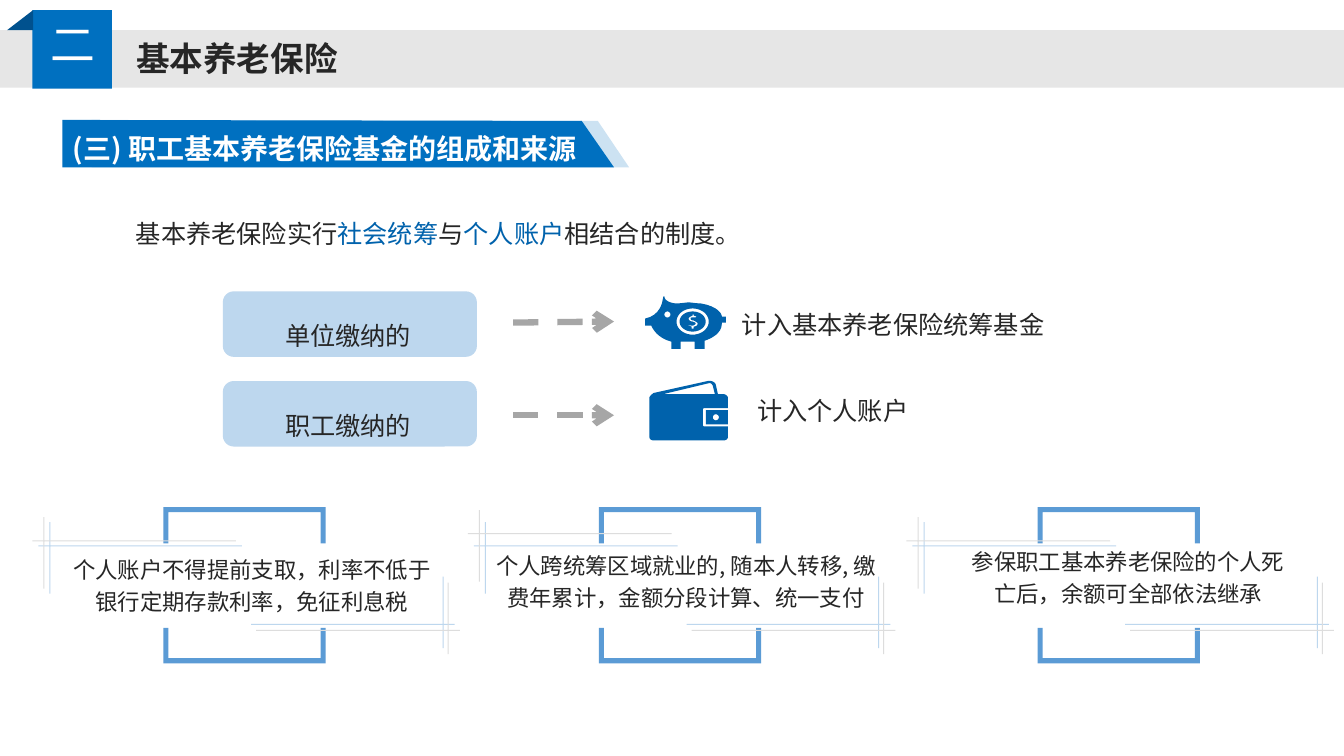
import math
from dataclasses import dataclass
from lxml import etree
from pptx import Presentation
from pptx import util as u
from pptx.dml import color
from pptx.enum import dml, shapes, text
from pptx.oxml import ns


@dataclass(frozen=True)
class Theme:
    blue: str = "0070C0"
    dark_blue: str = "00518E"
    icon: str = "0062AC"
    pale: str = "BDD7EE"
    bracket: str = "5B9BD5"
    band: str = "D9D9D9"
    hairline: str = "DDDDDD"
    arrow: str = "A6A6A6"
    ink: str = "262626"
    white: str = "FFFFFF"
    font: str = "Noto Sans CJK SC"
    number_font: str = "Noto Sans CJK JP"
    number: int = 32
    title: int = 24
    heading: int = 20
    body: int = 18
    note: int = 16


@dataclass(frozen=True)
class Run:
    words: str
    size: int
    color: str
    bold: bool = False
    font: str = Theme.font


@dataclass(frozen=True)
class Flow:
    payer: str
    top: float
    arrow_start: float
    arrow_end: float
    fund: str
    fund_box: tuple


@dataclass(frozen=True)
class Card:
    left: float
    words: str
    text_box: tuple
    gray_top: float = 5.13


THEME = Theme()
FLOWS = [
    Flow("单位缴纳的", 2.89, 3.2, 3.19, "计入基本养老保险统筹基金", (7.26, 3.02, 3.23, 0.4)),
    Flow("职工缴纳的", 3.78, 4.12, 4.12, "计入个人账户", (7.41, 3.87, 1.72, 0.4)),
]
CARDS = [
    Card(1.62, "个人账户不得提前支取，利率不低于银行定期存款利率，免征利息税", (0.62, 5.58, 3.76, 0.4)),
    Card(5.94, "个人跨统筹区域就业的, 随本人转移, 缴费年累计，金额分段计算、统一支付",
         (4.78, 5.54, 4.05, 0.4), 5.06),
    Card(10.29, "参保职工基本养老保险的个人死亡后，余额可全部依法继承", (9.54, 5.5, 3.3, 0.4)),
]
PIG = [
    (7.16, 3.14), (7.16, 3.12, 7.13, 3.04, 6.95, 3.01), (6.9, 3.01, 6.86, 3, 6.83, 3),
    (6.8, 3, 6.76, 3.01, 6.71, 3.01), (6.67, 3.01, 6.59, 2.99, 6.59, 2.94), (6.58, 2.94),
    (6.57, 2.99), (6.57, 2.99, 6.55, 3.13, 6.4, 3.16), (6.4, 3.23), (6.46, 3.23),
    (6.47, 3.25, 6.51, 3.35, 6.66, 3.39), (6.66, 3.46), (6.75, 3.46), (6.75, 3.39),
    (6.89, 3.39), (6.89, 3.46), (6.99, 3.46), (6.99, 3.38),
    (7.05, 3.36, 7.16, 3.31, 7.16, 3.21), (7.16, 3.2), (7.2, 3.2), (7.2, 3.14),
]
DOLLAR = [
    (6.88, 3.24), (6.88, 3.26), (6.86, 3.26), (6.86, 3.24), (6.83, 3.23), (6.83, 3.22),
    (6.84, 3.23, 6.85, 3.23, 6.87, 3.23), (6.88, 3.23, 6.9, 3.22, 6.9, 3.21),
    (6.9, 3.2, 6.89, 3.2, 6.87, 3.19), (6.85, 3.19, 6.83, 3.18, 6.83, 3.16),
    (6.83, 3.15, 6.85, 3.14, 6.87, 3.13), (6.87, 3.12), (6.88, 3.12), (6.88, 3.13),
    (6.91, 3.14), (6.9, 3.15), (6.87, 3.15), (6.86, 3.15, 6.85, 3.15, 6.85, 3.16),
    (6.85, 3.17, 6.86, 3.18, 6.88, 3.18), (6.9, 3.19, 6.92, 3.2, 6.92, 3.21),
    (6.92, 3.23, 6.9, 3.24, 6.88, 3.24),
]
WALLET = [
    (7.17, 3.91), (7.12, 3.91), (7.1, 3.82), (7.1, 3.8, 7.06, 3.77, 7.02, 3.78), (6.48, 3.9),
    (6.47, 3.91, 6.44, 3.93, 6.44, 3.95), (6.44, 4.33), (6.44, 4.36, 6.46, 4.37, 6.49, 4.37),
    (7.17, 4.37), (7.2, 4.37, 7.22, 4.36, 7.22, 4.33), (7.22, 4.23), (6.98, 4.23),
    (6.97, 4.22), (6.97, 4.06), (6.98, 4.05), (7.22, 4.05), (7.22, 3.95),
    (7.22, 3.93, 7.2, 3.91, 7.17, 3.91),
]
BANKNOTE = [(6.58, 3.91), (7.04, 3.8), (7.05, 3.8, 7.07, 3.82, 7.07, 3.83), (7.09, 3.91)]


def ellipse(x: float, y: float, rx: float, ry: float) -> list:
    angles = [math.tau * step / 40 for step in range(40)]
    return [(x + rx * math.cos(a), y + ry * math.sin(a)) for a in angles]


def flatten(segments: list) -> list:
    points = []
    for segment in segments:
        if len(segment) == 2:
            points.append(segment)
            continue
        knots = [points[-1], segment[:2], segment[2:4], segment[4:]]
        for step in range(1, 9):
            t = step / 8
            weights = ((1 - t) ** 3, 3 * t * (1 - t) ** 2, 3 * t * t * (1 - t), t ** 3)
            points.append(tuple(sum(w * k[axis] for w, k in zip(weights, knots)) for axis in (0, 1)))
    return points


def paint(shape, fill: str, opacity: int = 100) -> None:
    shape.shadow.inherit = False
    shape.fill.solid()
    shape.fill.fore_color.rgb = color.RGBColor.from_string(fill)
    shape.line.fill.background()
    if opacity < 100:
        rgb = shape.element.spPr.find(".//" + ns.qn("a:srgbClr"))
        etree.SubElement(rgb, ns.qn("a:alpha"), val=str(opacity * 1000))


def add_block(slide, kind, box: tuple, fill: str, opacity: int = 100) -> None:
    paint(slide.shapes.add_shape(kind, *map(u.Inches, box)), fill, opacity)


def add_outline(slide, contours: list, fill: str, opacity: int = 100):
    builder = None
    for contour in contours:
        start, *rest = [(u.Inches(x), u.Inches(y)) for x, y in flatten(contour)]
        if builder is None:
            builder = slide.shapes.build_freeform(*start, scale=1.0)
        else:
            builder.move_to(*start)
        builder.add_line_segments(rest, close=True)
    shape = builder.convert_to_shape()
    paint(shape, fill, opacity)
    return shape


def write(shape, runs: list, wrap: bool = False, spacing: float = 1.0,
          align=text.PP_ALIGN.LEFT, anchor=text.MSO_ANCHOR.TOP) -> None:
    frame = shape.text_frame
    frame.word_wrap = wrap
    middle = anchor == text.MSO_ANCHOR.MIDDLE
    frame.auto_size = text.MSO_AUTO_SIZE.NONE if middle else text.MSO_AUTO_SIZE.SHAPE_TO_FIT_TEXT
    frame.vertical_anchor = anchor
    paragraph = frame.paragraphs[0]
    paragraph.alignment = align
    paragraph.line_spacing = spacing
    for item in runs:
        run = paragraph.add_run()
        run.text = item.words
        run.font.size = u.Pt(item.size)
        run.font.bold = item.bold
        run.font.color.rgb = color.RGBColor.from_string(item.color)
        run.font.name = item.font
        etree.SubElement(run.font._element, ns.qn("a:ea"), typeface=item.font)


def add_text(slide, box: tuple, runs: list, **layout) -> None:
    write(slide.shapes.add_textbox(*map(u.Inches, box)), runs, **layout)


def add_header(slide) -> None:
    add_block(slide, shapes.MSO_SHAPE.RECTANGLE, (0, 0.3, 13.33, 0.57), THEME.band, 65)
    add_block(slide, shapes.MSO_SHAPE.RECTANGLE, (0.32, 0.1, 0.79, 0.78), THEME.blue)
    add_outline(slide, [[(0.07, 0.3), (0.33, 0.1), (0.33, 0.3)]], THEME.dark_blue)
    title = slide.shapes.title
    title.left, title.top, title.width, title.height = map(u.Inches, (1.25, 0.33, 2.22, 0.5))
    write(title, [Run("基本养老保险", THEME.title, THEME.ink, True)])
    title.element.getparent().append(title.element)
    add_text(slide, (0.4, 0.12, 0.65, 0.64),
             [Run("二", THEME.number, THEME.white, font=THEME.number_font)])
    add_outline(slide, [[(0.91, 1.19), (5.93, 1.2), (6.24, 1.66), (0.91, 1.66)]], THEME.blue, 20)
    banner = add_outline(slide, [[(0.62, 1.19), (5.77, 1.2), (6.09, 1.66), (0.62, 1.66)]], THEME.blue)
    write(banner, [Run("(三) 职工基本养老保险基金的组成和来源", THEME.heading, THEME.white, True)],
          wrap=True, spacing=1.3, anchor=text.MSO_ANCHOR.MIDDLE)


def add_flow(slide, flow: Flow) -> None:
    add_block(slide, shapes.MSO_SHAPE.ROUNDED_RECTANGLE, (2.21, flow.top, 2.52, 0.65), THEME.pale)
    add_text(slide, (2.73, flow.top - 0.06, 1.83, 0.71),
             [Run(flow.payer, THEME.body, THEME.ink)], wrap=True, spacing=2.0)
    ends = map(u.Inches, (5.09, flow.arrow_start, 6.09, flow.arrow_end))
    arrow = slide.shapes.add_connector(shapes.MSO_CONNECTOR.STRAIGHT, *ends)
    arrow.line.color.rgb = color.RGBColor.from_string(THEME.arrow)
    arrow.line.width = u.Pt(4.5)
    arrow.line.dash_style = dml.MSO_LINE.DASH
    etree.SubElement(arrow.line._get_or_add_ln(), ns.qn("a:tailEnd"), type="arrow")
    etree.SubElement(arrow.element.spPr, ns.qn("a:effectLst"))
    add_text(slide, flow.fund_box, [Run(flow.fund, THEME.body, THEME.ink)])


def add_cross(slide, left: float, top: float, x: float, y: float, fill: str) -> None:
    line, width, height = 0.01, 2.02, 0.71
    corners = [(x, 0), (x + line, 0), (x + line, y), (width, y), (width, y + line),
               (x + line, y + line), (x + line, height), (x, height), (x, y + line),
               (0, y + line), (0, y), (x, y)]
    add_outline(slide, [[(left + dx, top + dy) for dx, dy in corners]], fill)


def add_card(slide, card: Card) -> None:
    left, right, edge = card.left, card.left + 1.61, 0.05
    halves = [[(left, inner), (left, outer), (right, outer), (right, inner), (right - edge, inner),
               (right - edge, inside), (left + edge, inside), (left + edge, inner)]
              for inner, outer, inside in ((6.23, 6.58, 6.53), (5.39, 5.03, 5.08))]
    add_outline(slide, halves, THEME.bracket)
    add_text(slide, card.text_box, [Run(card.words, THEME.note, THEME.ink)], wrap=True,
             spacing=1.2, align=text.PP_ALIGN.CENTER, anchor=text.MSO_ANCHOR.MIDDLE)
    add_cross(slide, left - 1.24, 5.18, 0.11, 0.23, THEME.pale)
    add_cross(slide, left - 1.3, card.gray_top, 0.11, 0.23, THEME.hairline)
    add_cross(slide, left + 0.87, 5.72, 1.9, 0.47, THEME.pale)
    add_cross(slide, left + 0.92, 5.78, 1.9, 0.47, THEME.hairline)


def main() -> None:
    presentation = Presentation()
    presentation.slide_width, presentation.slide_height = u.Inches(13.33), u.Inches(7.5)
    slide = presentation.slides.add_slide(presentation.slide_layouts[5])
    add_header(slide)
    intro = [("基本养老保险实行", THEME.ink), ("社会统筹", THEME.icon), ("与", THEME.ink),
             ("个人账户", THEME.icon), ("相结合的制度。", THEME.ink)]
    add_text(slide, (1.25, 2.12, 6.26, 0.4), [Run(words, THEME.body, ink) for words, ink in intro])
    for flow in FLOWS:
        add_flow(slide, flow)
    add_outline(slide, [ellipse(6.87, 3.19, 0.13, 0.1), DOLLAR], THEME.icon)
    add_outline(slide, [PIG, ellipse(6.62, 3.12, 0.03, 0.03), ellipse(6.87, 3.19, 0.16, 0.13)], THEME.icon)
    clasp = [(7, 4.07), (7.22, 4.07), (7.22, 4.21), (7, 4.21)]
    add_outline(slide, [clasp, ellipse(7.1, 4.14, 0.03, 0.03)], THEME.icon)
    add_outline(slide, [WALLET, BANKNOTE], THEME.icon)
    for card in CARDS:
        add_card(slide, card)
    presentation.save("out.pptx")


if __name__ == "__main__":
    main()
